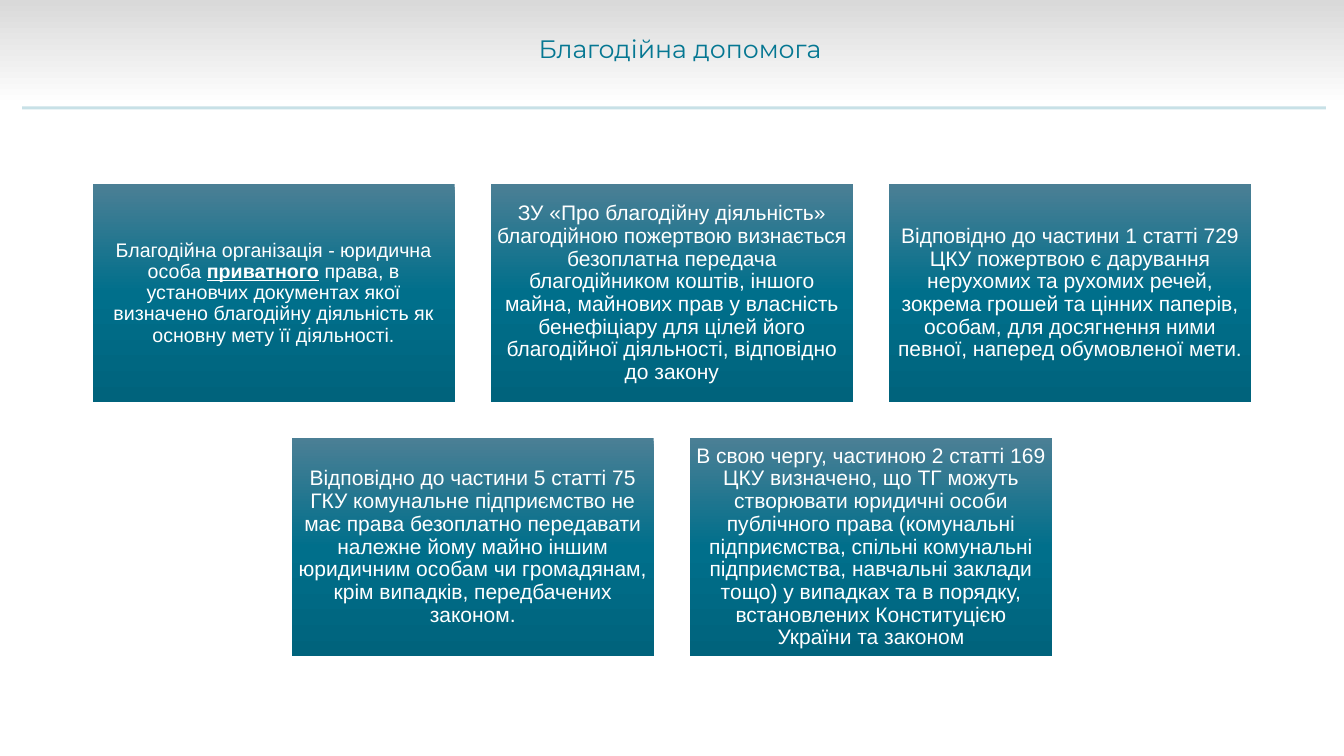
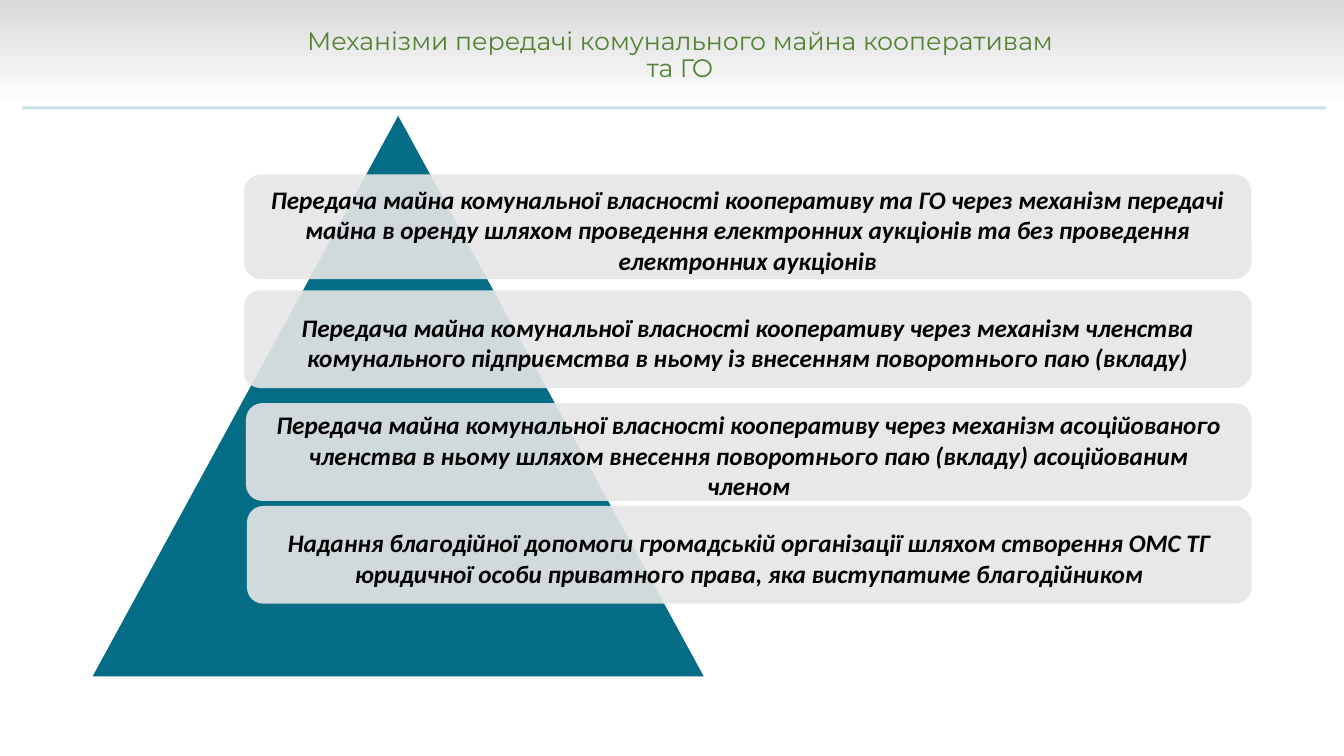
from dataclasses import dataclass
from typing import Sequence

from lxml.etree import SubElement
from pptx import Presentation
from pptx.dml.color import RGBColor
from pptx.enum.shapes import MSO_CONNECTOR, MSO_SHAPE
from pptx.enum.text import MSO_ANCHOR, PP_ALIGN
from pptx.oxml.ns import qn
from pptx.util import Inches, Pt

WIDTH, HEIGHT = Inches(13.33), Inches(7.5)
TEAL, GREEN, WHITE, BLACK, GRAY = "057792", "548235", "FFFFFF", "000000", "E7E6E6"
PYRAMID_TEAL = "056C86"
BAND_STOPS = ((0, "D9D9D9"), (100, WHITE))
CARD_STOPS = ((0, "4B7F95"), (50, "006F8B"), (100, "00637C"))


@dataclass(frozen=True)
class Box:
    """Position and size in percent of the slide's width and height."""
    left: float
    top: float
    width: float
    height: float

    def place(self) -> tuple:
        return (across(self.left), down(self.top), across(self.width), down(self.height))


@dataclass(frozen=True)
class TextStyle:
    font: str
    size: float
    color: str
    spacing: float = 0.9
    bold: bool = False
    italic: bool = False


@dataclass(frozen=True)
class Card:
    column: float
    row: int
    text: str
    size: float = 15


@dataclass(frozen=True)
class Bar:
    left: float
    top: float
    height: float
    text: str


CARD_GRID = Box(6.9, 24.4, 26.93, 28.8)
COLUMN_STEP, ROW_STEP = 29.63, 33.6
BAR_RIGHT = 93.12
BAR_STYLE = TextStyle("Calibri", 18, BLACK, 1.0, bold=True, italic=True)

CARDS = (
    Card(0, 0, "Благодійна організація - юридична особа *приватного* права, в установчих "
         "документах якої визначено благодійну діяльність як основну мету її діяльності.", 14),
    Card(1, 0, "ЗУ «Про благодійну діяльність» благодійною пожертвою визнається безоплатна "
         "передача благодійником коштів, іншого майна, майнових прав у власність бенефіціару "
         "для цілей його благодійної діяльності, відповідно до закону"),
    Card(2, 0, "Відповідно до частини 1 статті 729 ЦКУ пожертвою є дарування нерухомих та "
         "рухомих речей, зокрема грошей та цінних паперів, особам, для досягнення ними "
         "певної, наперед обумовленої мети."),
    Card(0.5, 1, "Відповідно до частини 5 статті 75 ГКУ комунальне підприємство не має права "
         "безоплатно передавати належне йому майно іншим юридичним особам чи громадянам, "
         "крім випадків, передбачених законом."),
    Card(1.5, 1, "В свою чергу, частиною 2 статті 169 ЦКУ визначено, що ТГ можуть створювати "
         "юридичні особи публічного права (комунальні підприємства, спільні комунальні "
         "підприємства, навчальні заклади тощо) у випадках та в порядку, встановлених "
         "Конституцією України та законом"),
)
BARS = (
    Bar(18.15, 23.07, 13.87, "Передача майна комунальної власності кооперативу та ГО через "
        "механізм передачі майна в оренду шляхом проведення електронних аукціонів та без "
        "проведення електронних аукціонів"),
    Bar(18.15, 38.4, 12.93, "Передача майна комунальної власності кооперативу через механізм "
        "членства комунального підприємства в ньому із внесенням поворотнього паю (вкладу)"),
    Bar(18.3, 53.33, 12.93, "Передача майна комунальної власності кооперативу через механізм "
        "асоційованого членства в ньому шляхом внесення поворотнього паю (вкладу) "
        "асоційованим членом"),
    Bar(18.38, 66.93, 12.93, "Надання благодійної допомоги громадській організації шляхом "
        "створення ОМС ТГ юридичної особи приватного права, яка виступатиме благодійником"),
)


def across(percent: float) -> int:
    return round(WIDTH * percent / 100)


def down(percent: float) -> int:
    return round(HEIGHT * percent / 100)


def color(value: str) -> RGBColor:
    return RGBColor.from_string(value)


def set_opacity(shape, percent: int) -> None:
    node = next(shape.element.spPr.iter(qn("a:srgbClr")))
    SubElement(node, qn("a:alpha"), val=str(percent * 1000))


def fill_gradient(shape, stops: Sequence[tuple[int, str]]) -> None:
    shape.fill.gradient()
    shape.fill.gradient_angle = 270
    stop_list = next(shape.element.spPr.iter(qn("a:gsLst")))
    for stop in list(stop_list):
        stop_list.remove(stop)
    for position, value in stops:
        stop = SubElement(stop_list, qn("a:gs"), pos=str(position * 1000))
        SubElement(stop, qn("a:srgbClr"), val=value)


def add_block(slide, kind: MSO_SHAPE, box: Box, fill: str | None = None):
    shape = slide.shapes.add_shape(kind, *box.place())
    shape.shadow.inherit = False
    shape.line.fill.background()
    if fill:
        shape.fill.solid()
        shape.fill.fore_color.rgb = color(fill)
    return shape


def write(shape, text: str, style: TextStyle, side: float, top: float, bottom: float) -> None:
    """Write centred text; parts between asterisks are bold and underlined."""
    frame = shape.text_frame
    frame.word_wrap = True
    frame.vertical_anchor = MSO_ANCHOR.MIDDLE
    frame.margin_left = frame.margin_right = Inches(side)
    frame.margin_top, frame.margin_bottom = Inches(top), Inches(bottom)
    paragraph = frame.paragraphs[0]
    paragraph.alignment = PP_ALIGN.CENTER
    paragraph.line_spacing = style.spacing
    for index, part in enumerate(text.split("*")):
        emphasized = index % 2 == 1
        run = paragraph.add_run()
        run.text = part
        run.font.name = style.font
        run.font.size = Pt(style.size)
        run.font.color.rgb = color(style.color)
        run.font.bold = style.bold or emphasized
        run.font.italic = style.italic
        run.font.underline = emphasized


def add_titled_slide(presentation, title: str, title_color: str, title_height: float):
    slide = presentation.slides.add_slide(presentation.slide_layouts[6])
    band = add_block(slide, MSO_SHAPE.RECTANGLE, Box(0, 0, 100, 14))
    fill_gradient(band, BAND_STOPS)
    rule = slide.shapes.add_connector(
        MSO_CONNECTOR.STRAIGHT, across(1.65), down(14.27), across(98.65), down(14.27))
    rule.line.color.rgb = color(TEAL)
    rule.line.width = Pt(2)
    set_opacity(rule, 22)
    SubElement(rule.element.spPr, qn("a:effectLst"))
    heading = slide.shapes.add_textbox(*Box(21.53, 2.53, 58.14, title_height).place())
    write(heading, title, TextStyle("Montserrat", 18, title_color), 0.1, 0.05, 0.05)
    return slide


def add_card(slide, card: Card) -> None:
    box = Box(CARD_GRID.left + card.column * COLUMN_STEP, CARD_GRID.top + card.row * ROW_STEP,
              CARD_GRID.width, CARD_GRID.height)
    shape = add_block(slide, MSO_SHAPE.RECTANGLE, box)
    fill_gradient(shape, CARD_STOPS)
    write(shape, card.text, TextStyle("Arial", card.size, WHITE), 0.06, 0.06, 0.06)


def add_bar(slide, bar: Bar) -> None:
    box = Box(bar.left, bar.top, BAR_RIGHT - bar.left, bar.height)
    shape = add_block(slide, MSO_SHAPE.ROUNDED_RECTANGLE, box, GRAY)
    set_opacity(shape, 90)
    write(shape, bar.text, BAR_STYLE, 0.15, 0.06, 0)


def main() -> None:
    presentation = Presentation()
    presentation.slide_width, presentation.slide_height = WIDTH, HEIGHT

    charity = add_titled_slide(presentation, "Благодійна допомога", TEAL, 8.27)
    for card in CARDS:
        add_card(charity, card)

    mechanisms = add_titled_slide(
        presentation, "Механізми передачі комунального майна кооперативам та ГО", GREEN, 9.6)
    add_block(mechanisms, MSO_SHAPE.ISOSCELES_TRIANGLE, Box(6.9, 15.33, 45.46, 74.13),
              PYRAMID_TEAL)
    for bar in BARS:
        add_bar(mechanisms, bar)

    presentation.save("out.pptx")


if __name__ == "__main__":
    main()
